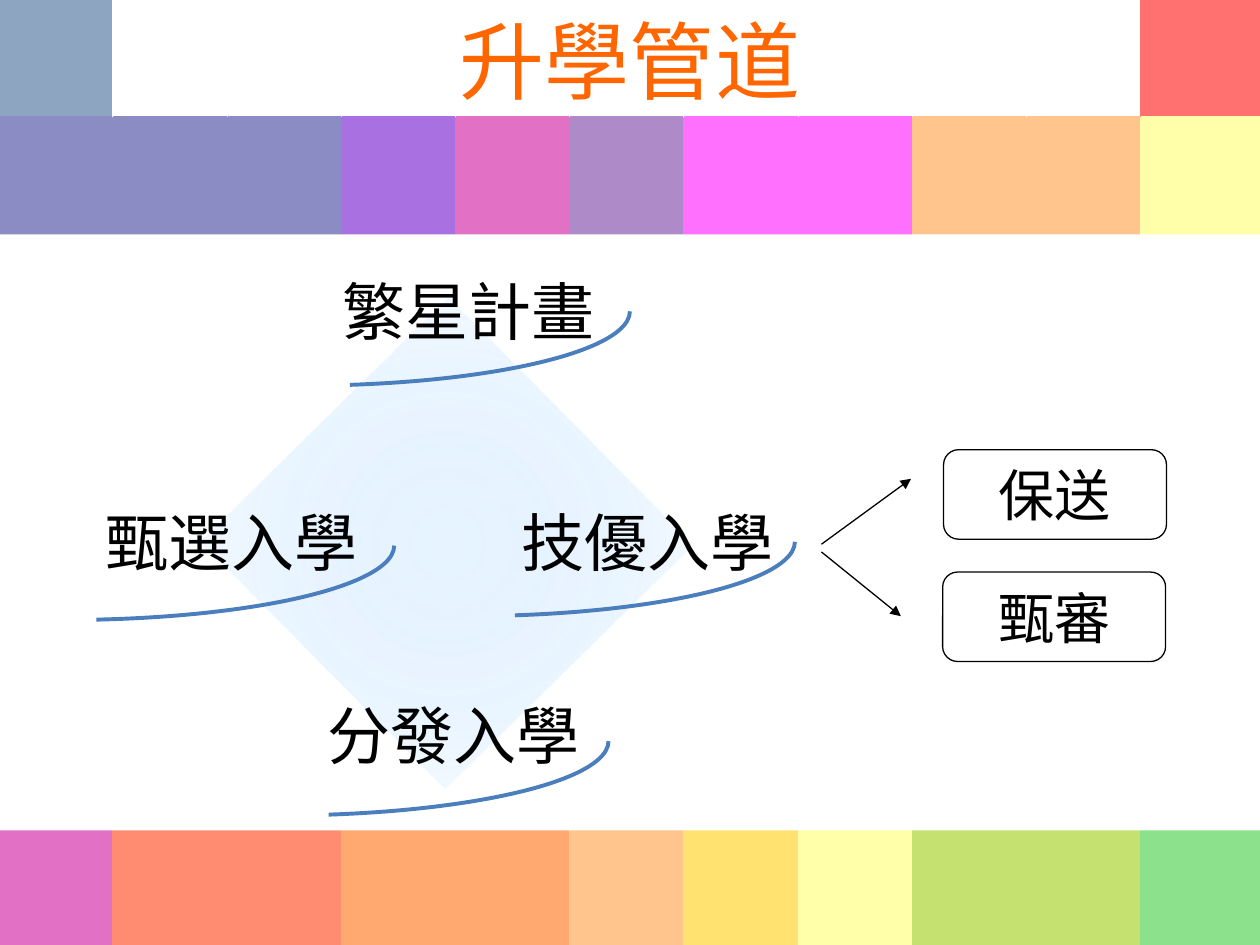
"""Build the slide on admission routes with colour bands, four routes and two branches."""
from lxml import etree
from pptx import Presentation
from pptx import util as u
from pptx.dml.color import RGBColor
from pptx.enum import shapes, text
from pptx.oxml import ns, parse_xml

WHITE = RGBColor(0xFF, 0xFF, 0xFF)
BLACK = RGBColor(0x00, 0x00, 0x00)
STEEL = RGBColor(0x37, 0x60, 0x92)
INDIGO = RGBColor(0x33, 0x33, 0x99)
VIOLET = RGBColor(0x66, 0x00, 0xCC)
PURPLE = RGBColor(0x70, 0x30, 0xA0)
BERRY = RGBColor(0xCC, 0x00, 0x99)
MAGENTA = RGBColor(0xFF, 0x00, 0xFF)
RED = RGBColor(0xFF, 0x00, 0x00)
VERMILION = RGBColor(0xFF, 0x33, 0x00)
ORANGE = RGBColor(0xFF, 0x66, 0x00)
APRICOT = RGBColor(0xFF, 0x99, 0x33)
GOLD = RGBColor(0xFF, 0xCC, 0x00)
LEMON = RGBColor(0xFF, 0xFF, 0x66)
LIME = RGBColor(0x99, 0xCC, 0x00)
GREEN = RGBColor(0x33, 0xCC, 0x33)
SWOOSH = RGBColor(0x4B, 0x7E, 0xBC)
GLOW = ((0, RGBColor(0x96, 0xD0, 0xFF), 22),
        (50, RGBColor(0xBF, 0xE1, 0xFF), 33),
        (100, RGBColor(0xE0, 0xEF, 0xFF), 17))

TILE, PITCH = 67.5, 65.25
BANDS = (
    (0, [STEEL] + [WHITE] * 9 + [RED]),
    (67.5, [INDIGO] * 3 + [VIOLET, BERRY, PURPLE] + [MAGENTA] * 2 + [APRICOT] * 2 + [LEMON]),
    (472.5, [BERRY] + [VERMILION] * 2 + [ORANGE] * 2 + [APRICOT, GOLD, LEMON] + [LIME] * 2 + [GREEN]),
)
ROUTES = (
    ("分發入學", "Noto Sans CJK SC", (180, 394.5), (-29.5, 381), 182.59),
    ("甄選入學", "DejaVu Sans", (53.3, 284.4), (-152, 269.3), 176.17),
    ("繁星計畫", "DejaVu Sans", (188.6, 152), (-17.3, 135.4), 182.59),
    ("技優入學", "Noto Sans CJK SC", (291, 284.4), (77, 267.1), 182.59),
)
BRANCHES = (
    ("保送", (539.2, 257), (469.4, 311), (520.6, 273.6)),
    ("甄審", (538.7, 326.9), (469.4, 315.4), (514.8, 352.1)),
)


class RouteSlide:
    """Draws styled elements on one slide, with lengths in points."""

    def __init__(self, slide, ink=BLACK, thin=0.75, thick=2.25):
        self.slide, self.ink, self.thin, self.thick = slide, ink, thin, thick

    def shape(self, kind, left, top, width, height, fill=None, line=None, weight=0):
        item = self.slide.shapes.add_shape(kind, u.Pt(left), u.Pt(top), u.Pt(width), u.Pt(height))
        item.shadow.inherit = False
        for part, colour in ((item.fill, fill), (item.line.fill, line)):
            if colour is None:
                part.background()
            else:
                part.solid()
                part.fore_color.rgb = colour
        if line is not None:
            item.line.width = u.Pt(weight)
        return item

    def rect(self, left, top, width, height, fill, line=None, weight=0):
        return self.shape(shapes.MSO_SHAPE.RECTANGLE, left, top, width, height, fill, line, weight)

    def veil(self, left, top, width, height, opacity):
        cover = self.rect(left, top, width, height, WHITE)
        tint = cover._element.spPr.find(".//" + ns.qn("a:srgbClr"))
        etree.SubElement(tint, ns.qn("a:alpha"), val=str(opacity * 1000))

    def diamond(self, left, top, side, angle):
        glow = self.rect(left, top, side, side, WHITE)
        glow.rotation = angle
        stops = "".join(
            f'<a:gs pos="{pos * 1000}"><a:srgbClr val="{colour}">'
            f'<a:alpha val="{opacity * 1000}"/></a:srgbClr></a:gs>'
            for pos, colour, opacity in GLOW)
        gradient = parse_xml(
            f'<a:gradFill {ns.nsdecls("a")} rotWithShape="1"><a:gsLst>{stops}</a:gsLst>'
            '<a:path path="circle"><a:fillToRect l="50000" t="50000" r="50000" b="50000"/>'
            '</a:path></a:gradFill>')
        properties = glow._element.spPr
        properties.replace(properties.find(ns.qn("a:solidFill")), gradient)

    def wording(self, holder, words, size, font, colour, align):
        frame = holder.text_frame
        frame.word_wrap = True
        frame.vertical_anchor = text.MSO_ANCHOR.MIDDLE
        paragraph = frame.paragraphs[0]
        paragraph.alignment = align
        run = paragraph.add_run()
        run.text = words
        run.font.size, run.font.name = u.Pt(size), font
        run.font.color.rgb = colour
        etree.SubElement(run._r.get_or_add_rPr(), ns.qn("a:ea"), typeface=font)

    def label(self, words, left, top, width, height, size, font, colour=None,
              align=text.PP_ALIGN.LEFT):
        box = self.slide.shapes.add_textbox(u.Pt(left), u.Pt(top), u.Pt(width), u.Pt(height))
        self.wording(box, words, size, font, colour or self.ink, align)

    def swoosh(self, left, top, start):
        curve = self.shape(shapes.MSO_SHAPE.ARC, left, top, 377.3, 85, line=SWOOSH, weight=self.thick)
        curve.adjustments[0], curve.adjustments[1] = start, 0
        curve._element.spPr.find(ns.qn("a:xfrm")).set("flipV", "1")

    def branch_box(self, words, left, top):
        box = self.shape(shapes.MSO_SHAPE.ROUNDED_RECTANGLE, left, top, 127.4, 51.1,
                         line=self.ink, weight=self.thin)
        self.wording(box, words, 32, "DejaVu Sans", self.ink, text.PP_ALIGN.CENTER)

    def arrow(self, start, end):
        link = self.slide.shapes.add_connector(
            shapes.MSO_CONNECTOR.STRAIGHT, *(u.Pt(value) for value in (*start, *end)))
        link.line.color.rgb = self.ink
        link.line.width = u.Pt(self.thin)
        properties = link._element.spPr
        etree.SubElement(properties.find(ns.qn("a:ln")), ns.qn("a:tailEnd"), type="triangle")
        etree.SubElement(properties, ns.qn("a:effectLst"))


def main():
    deck = Presentation()
    deck.slide_width, deck.slide_height = u.Pt(720), u.Pt(540)
    page = RouteSlide(deck.slides.add_slide(deck.slide_layouts[6]))

    for column in range(11):
        for top, colours in BANDS:
            page.rect(column * PITCH, top, TILE, TILE, colours[column], colours[column], 2)
    page.rect(0, 134, 720, 340.5, WHITE)
    page.veil(-25, -24.5, 788.5, 595.5, 44)

    page.label("升學管道", 65, 0, 590, 67.5, 48.6, "Calibri", ORANGE, text.PP_ALIGN.CENTER)
    page.diamond(156, 211, 198.7, 45.4)
    for words, corner, start, end in BRANCHES:
        page.branch_box(words, *corner)
        page.arrow(start, end)
    for words, font, corner, curve_corner, start_angle in ROUTES:
        page.label(words, *corner, 167, 50.4, 36, font)
        page.swoosh(*curve_corner, start_angle)

    deck.save("out.pptx")


if __name__ == "__main__":
    main()
